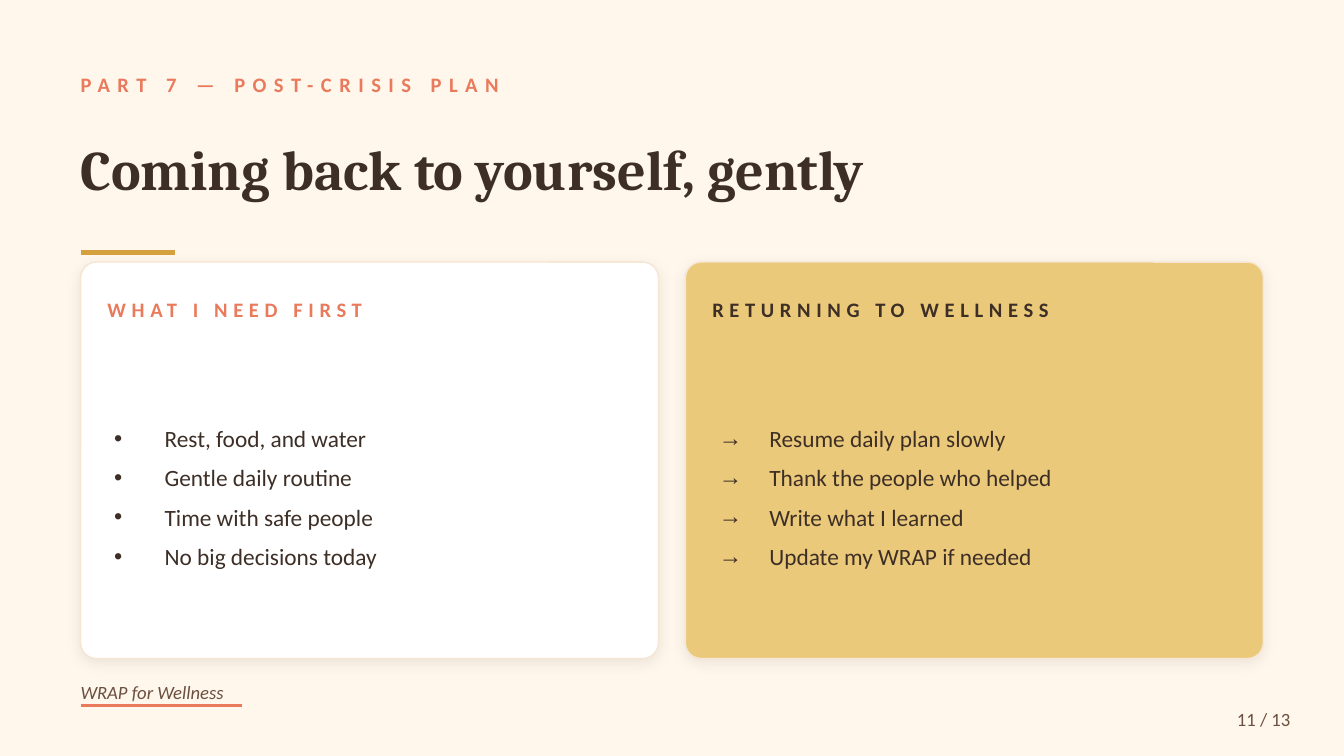
from lxml.etree import SubElement
from pptx import Presentation
from pptx.dml.color import RGBColor
from pptx.enum.shapes import MSO_CONNECTOR, MSO_SHAPE
from pptx.enum.text import MSO_ANCHOR, PP_ALIGN
from pptx.oxml import parse_xml
from pptx.oxml.ns import nsdecls, qn
from pptx.util import Inches, Pt

COLORS = {
    "cream": "FFF6EC", "coral": "E97A5C", "ink": "3D2F26", "gold": "D4A13E",
    "white": "FFFFFF", "sand": "EBC97A", "border": "F6E6D2", "brown": "6B4F3F",
}
RGB = {name: RGBColor.from_string(value) for name, value in COLORS.items()}

# Text formats: font attributes by role
BODY_FONT = {"name": "Calibri", "size": Pt(12.5)}
LABEL_FONT = {"name": "Calibri", "size": Pt(11), "bold": True}
TITLE_FONT = {"name": "Cambria", "size": Pt(30), "bold": True}
FOOTER_FONT = {"name": "Calibri", "size": Pt(10)}

LIST_INDENT = Inches(3 / 8)
SHADOW_XML = (
    f'<a:effectLst {nsdecls("a")}>'
    f'<a:outerShdw blurRad="{Pt(8)}" dist="{Pt(2)}" dir="5400000" algn="bl" rotWithShape="0">'
    '<a:srgbClr val="000000"><a:alpha val="8000"/></a:srgbClr>'
    '</a:outerShdw></a:effectLst>'
)


def write_text(shape, box, lines, font_format, color, spacing=0, bullet=None,
               align=PP_ALIGN.LEFT):
    """Place a text shape and fill it with one paragraph per line."""
    shape.left, shape.top, shape.width, shape.height = [Inches(value) for value in box]
    frame = shape.text_frame
    frame_format = {"word_wrap": True, "vertical_anchor": MSO_ANCHOR.MIDDLE,
                    "margin_left": 0, "margin_top": 0,
                    "margin_right": 0, "margin_bottom": 0}
    for attribute, value in frame_format.items():
        setattr(frame, attribute, value)
    for index, line in enumerate(lines):
        paragraph = frame.add_paragraph() if index else frame.paragraphs[0]
        paragraph.alignment = align
        if bullet:
            paragraph.space_after = Pt(6)
            properties = paragraph._p.get_or_add_pPr()
            properties.set("marL", str(LIST_INDENT))
            properties.set("indent", str(-LIST_INDENT))
            SubElement(properties, qn("a:buSzPct"), val="100000")
            SubElement(properties, qn("a:buFont"), typeface="Arial")
            SubElement(properties, qn("a:buChar"), char=bullet)
        run = paragraph.add_run()
        run.text = line
        for attribute, value in font_format.items():
            setattr(run.font, attribute, value)
        run.font.color.rgb = RGB[color]
        if spacing:
            run._r.get_or_add_rPr().set("spc", str(spacing * 100))


# Widescreen 16:9 slide
presentation = Presentation()
presentation.slide_width = Inches(10)
presentation.slide_height = Inches(10 * 9 / 16)
slide = presentation.slides.add_slide(presentation.slide_layouts[5])
slide.background.fill.solid()
slide.background.fill.fore_color.rgb = RGB["cream"]
shapes = slide.shapes

# Heading
write_text(shapes.add_textbox(0, 0, 0, 0), (0.6, 0.45, 6, 0.35),
           ["PART 7 — POST-CRISIS PLAN"], LABEL_FONT, "coral", spacing=4)
write_text(shapes.title, (0.6, 0.8, 8.8, 0.9),
           ["Coming back to yourself, gently"], TITLE_FONT, "ink")

# Accent rules under the title and the footer
for top, length, color, width in [(1.88, 0.7, "gold", 2.5), (5.25, 1.2, "coral", 1.5)]:
    rule = shapes.add_connector(MSO_CONNECTOR.STRAIGHT, Inches(0.6), Inches(top),
                                Inches(0.6 + length), Inches(top))
    rule.line.color.rgb = RGB[color]
    rule.line.width = Pt(width)
    SubElement(rule._element.spPr, qn("a:effectLst"))

# Two cards with a label and a list
cards = [
    ("WHAT I NEED FIRST", "white", "coral", "•",
     ["Rest, food, and water", "Gentle daily routine",
      "Time with safe people", "No big decisions today"]),
    ("RETURNING TO WELLNESS", "sand", "ink", "→",
     ["Resume daily plan slowly", "Thank the people who helped",
      "Write what I learned", "Update my WRAP if needed"]),
]
for index, (label, fill, label_color, bullet, items) in enumerate(cards):
    left = 0.6 + index * 4.5
    card = shapes.add_shape(MSO_SHAPE.ROUNDED_RECTANGLE, Inches(left), Inches(1.95),
                            Inches(4.3), Inches(2.95))
    card.adjustments[0] = 0.04
    card.fill.solid()
    card.fill.fore_color.rgb = RGB[fill]
    card.line.color.rgb = RGB["border"]
    card.line.width = Pt(0.75)
    card._element.spPr.append(parse_xml(SHADOW_XML))
    write_text(shapes.add_textbox(0, 0, 0, 0), (left + 0.2, 2.1, 4, 0.4),
               [label], LABEL_FONT, label_color, spacing=3)
    write_text(shapes.add_textbox(0, 0, 0, 0), (left + 0.25, 2.55, 4, 2.3),
               items, BODY_FONT, "ink", bullet=bullet)

# Footer
write_text(shapes.add_textbox(0, 0, 0, 0), (8.6, 5.2, 1, 0.3),
           ["11 / 13"], FOOTER_FONT, "brown", align=PP_ALIGN.RIGHT)
write_text(shapes.add_textbox(0, 0, 0, 0), (0.6, 5, 4, 0.3),
           ["WRAP for Wellness"], {**FOOTER_FONT, "italic": True}, "brown")

presentation.save("out.pptx")
